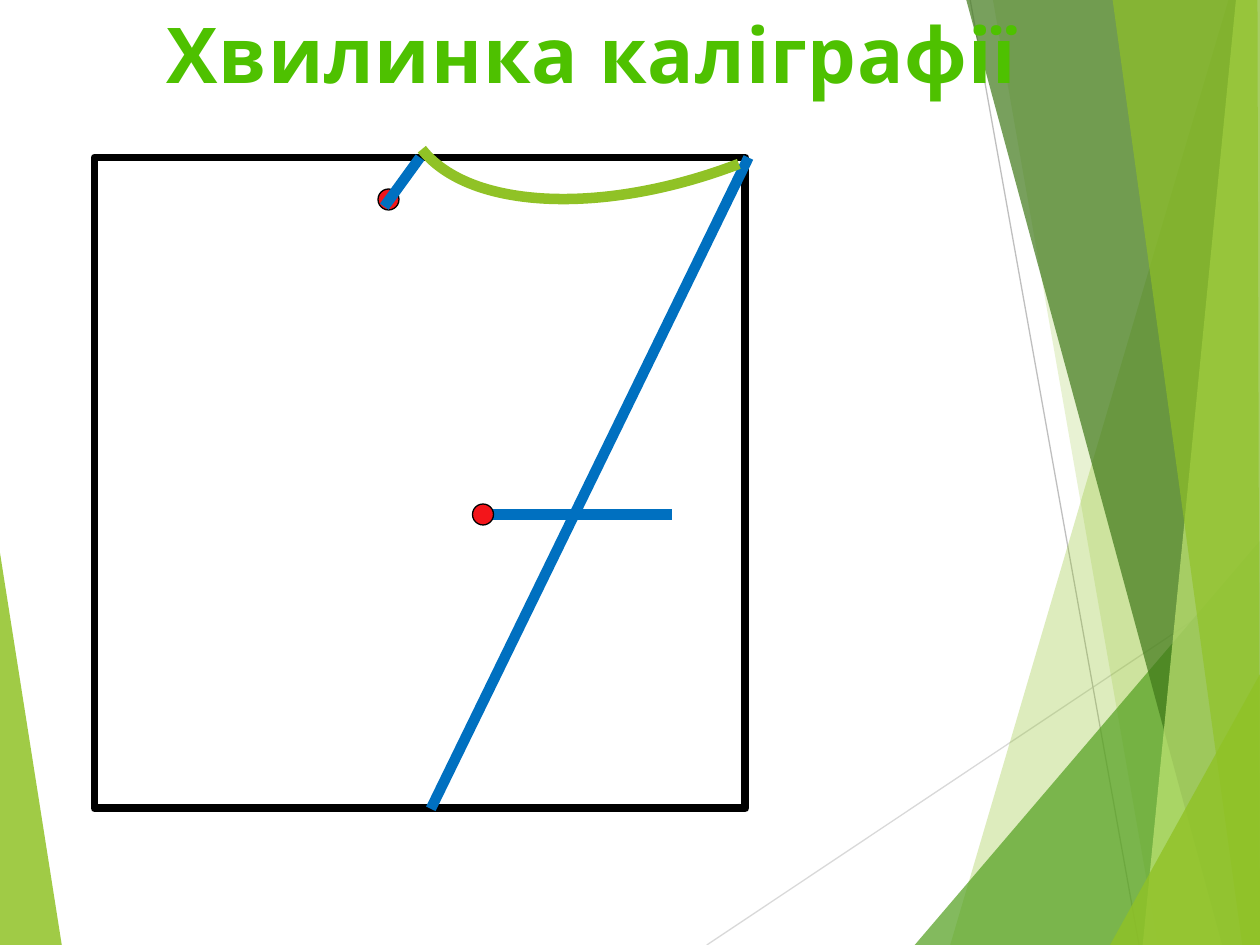
"""Build a calligraphy slide showing how to write the digit seven."""
from typing import NamedTuple

from lxml.etree import SubElement
from pptx import Presentation
from pptx.dml.color import RGBColor
from pptx.enum.shapes import MSO_CONNECTOR, MSO_SHAPE
from pptx.enum.text import MSO_ANCHOR, MSO_AUTO_SIZE, PP_ALIGN
from pptx.oxml.ns import qn
from pptx.util import Pt

WIDTH, HEIGHT = 720, 540
LIME = RGBColor(0x90, 0xC2, 0x26)
GREEN = RGBColor(0x54, 0xA0, 0x21)
FOREST = RGBColor(0x3F, 0x78, 0x19)
PALE_LIME = RGBColor(0xC0, 0xE4, 0x74)
LIGHT_GREY = RGBColor(0xD9, 0xD9, 0xD9)
GREY = RGBColor(0xBF, 0xBF, 0xBF)
BLUE = RGBColor(0x00, 0x70, 0xC0)
RED = RGBColor(0xF3, 0x15, 0x1A)
BLACK = RGBColor(0, 0, 0)
WHITE = RGBColor(0xFF, 0xFF, 0xFF)
TITLE_TOP = RGBColor(0x4E, 0xC1, 0x00)
TITLE_BOTTOM = RGBColor(0x37, 0x88, 0x00)
STROKE = 6
DOT_SIZE = 12


class Facet(NamedTuple):
    points: list[tuple[float, float]]
    color: RGBColor
    opacity: int


class Stroke(NamedTuple):
    start: tuple[float, float]
    end: tuple[float, float]
    color: RGBColor
    weight: float


LEFT_FACET = Facet([(0, 316), (35.3, HEIGHT), (0, HEIGHT)], LIME, 85)
RIGHT_FACETS = [
    Facet([(702, 0), (543, HEIGHT), (WIDTH, HEIGHT), (WIDTH, 0)], LIME, 30),
    Facet([(567.4, 0), (661.7, HEIGHT), (WIDTH, HEIGHT), (WIDTH, 0)], LIME, 20),
    Facet([(522.7, HEIGHT), (WIDTH, 309), (WIDTH, HEIGHT)], GREEN, 72),
    Facet([(552.2, 0), (698.4, HEIGHT), (WIDTH, HEIGHT), (WIDTH, 0)], FOREST, 70),
    Facet([(706.3, 0), (653, HEIGHT), (WIDTH, HEIGHT), (WIDTH, 0)], PALE_LIME, 70),
    Facet([(635.8, 0), (709.9, HEIGHT), (WIDTH, HEIGHT), (718.6, 0)], LIME, 65),
    Facet([(634.3, HEIGHT), (WIDTH, 385.2), (WIDTH, HEIGHT)], LIME, 80),
]
RAYS = [
    Stroke((403.9, HEIGHT), (WIDTH, 329), LIGHT_GREY, 0.75),
    Stroke((554.4, 0), (650.9, HEIGHT), GREY, 0.75),
]
DIGIT_STROKES = [
    Stroke((427.7, 90), (246.2, 462.2), BLUE, STROKE),
    Stroke((282, 294), (384, 294), BLUE, STROKE),
]
HOOK = Stroke((219.6, 118.1), (240, 90), BLUE, STROKE)
DOTS = [(216, 108), (270, 288)]


def draw_facet(slide, facet: Facet) -> None:
    first, *others = [(Pt(x), Pt(y)) for x, y in facet.points]
    builder = slide.shapes.build_freeform(*first)
    builder.add_line_segments(others, close=True)
    shape = builder.convert_to_shape()
    shape.shadow.inherit = False
    shape.fill.solid()
    shape.fill.fore_color.rgb = facet.color
    color = shape.element.spPr.find(qn("a:solidFill"))[0]
    SubElement(color, qn("a:alpha"), val=str(facet.opacity * 1000))
    shape.line.fill.background()


def draw_stroke(slide, stroke: Stroke):
    ends = [Pt(value) for value in (*stroke.start, *stroke.end)]
    line = slide.shapes.add_connector(MSO_CONNECTOR.STRAIGHT, *ends)
    line.line.color.rgb = stroke.color
    line.line.width = Pt(stroke.weight)
    SubElement(line.element.spPr, qn("a:effectLst"))
    return line


def draw_shape(slide, kind: MSO_SHAPE, bounds: tuple[float, float, float, float],
               fill: RGBColor | None, outline: RGBColor, weight: float):
    shape = slide.shapes.add_shape(kind, *[Pt(value) for value in bounds])
    shape.shadow.inherit = False
    if fill is None:
        shape.fill.background()
    else:
        shape.fill.solid()
        shape.fill.fore_color.rgb = fill
    shape.line.color.rgb = outline
    shape.line.width = Pt(weight)
    return shape


def write_title(slide, text: str) -> None:
    title = slide.shapes.title
    title.left, title.top, title.width, title.height = Pt(88), Pt(0), Pt(687.5), Pt(60.5)
    frame = title.text_frame
    frame.text = text
    frame.word_wrap = True
    frame.auto_size = MSO_AUTO_SIZE.SHAPE_TO_FIT_TEXT
    frame.vertical_anchor = MSO_ANCHOR.TOP
    para = frame.paragraphs[0]
    para.alignment = PP_ALIGN.LEFT
    span = para.runs[0]
    span.font.name, span.font.size, span.font.bold = "Karla", Pt(44), True
    span.font.fill.gradient()
    span.font.fill.gradient_angle = 270
    stops = span.font.fill.gradient_stops
    for stop, position, color in zip(stops, (0.25, 1), (TITLE_TOP, TITLE_BOTTOM)):
        stop.position = position
        stop.color.rgb = color
    span.font._element.set("spc", "50")
    title.element.getparent().append(title.element)


def main() -> None:
    deck = Presentation()
    deck.slide_width, deck.slide_height = Pt(WIDTH), Pt(HEIGHT)
    slide = deck.slides.add_slide(deck.slide_layouts[5])
    draw_facet(slide, LEFT_FACET)
    for ray in RAYS:
        draw_stroke(slide, ray)
    for facet in RIGHT_FACETS:
        draw_facet(slide, facet)
    cell = draw_shape(slide, MSO_SHAPE.RECTANGLE, (54, 90, 372, 372), WHITE, BLACK, 4.5)
    for stroke in DIGIT_STROKES:
        draw_stroke(slide, stroke)
    for left, top in DOTS:
        draw_shape(slide, MSO_SHAPE.OVAL, (left, top, DOT_SIZE, DOT_SIZE), RED, BLACK, 0.75)
    draw_stroke(slide, HOOK).end_connect(cell, 0)
    wave = draw_shape(slide, MSO_SHAPE.ARC, (223.2, -72.7, 336.2, 172.1), None, LIME, STROKE)
    wave.rotation = 159
    wave.adjustments[0], wave.adjustments[1] = 162, 213.25
    write_title(slide, "Хвилинка каліграфії")
    deck.save("out.pptx")


if __name__ == "__main__":
    main()
